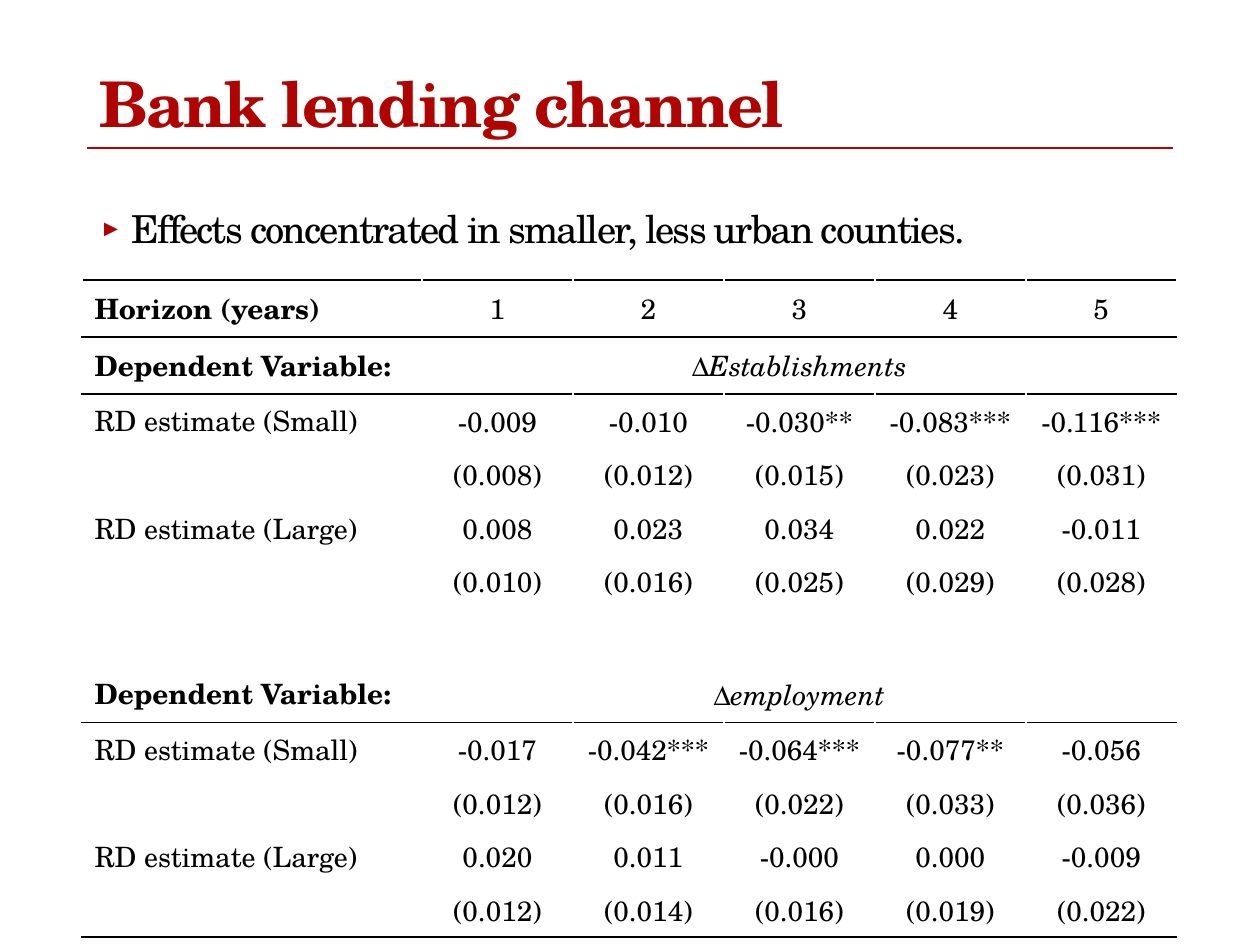
from lxml.etree import SubElement
from pptx import Presentation
from pptx.dml.color import RGBColor
from pptx.enum.shapes import MSO_CONNECTOR
from pptx.enum.text import MSO_ANCHOR, MSO_AUTO_SIZE, PP_ALIGN
from pptx.oxml.ns import qn
from pptx.util import Emu, Pt

PX = 914400 // 126
COLORS = {"accent": "B00400", "ink": "000000", "paper": "FFFFFF"}
FONT = "TeX Gyre Schola"

COLUMN_WIDTHS = [340] + [151] * 5
TALL_ROW, ROW = 57, 53
TALL_ROWS = {0, 1, 6, 7}
# Rule widths in points, keyed by row
TOP_RULES = {0: 1.5, 1: 1, 2: 1, 8: 1}
BOTTOM_RULES = {0: 1, 1: 1, 7: 1, 11: 1.5}

SMALL, LARGE = "RD estimate (Small)", "RD estimate (Large)"
DEPENDENT = "Dependent Variable:"
BOLD_LABELS = {"Horizon (years)", DEPENDENT}
# A row with a single value spans all the horizon columns
RESULTS = [
    ["Horizon (years)", "1", "2", "3", "4", "5"],
    [DEPENDENT, "ΔEstablishments"],
    [SMALL, "-0.009", "-0.010", "-0.030**", "-0.083***", "-0.116***"],
    ["", "(0.008)", "(0.012)", "(0.015)", "(0.023)", "(0.031)"],
    [LARGE, "0.008", "0.023", "0.034", "0.022", "-0.011"],
    ["", "(0.010)", "(0.016)", "(0.025)", "(0.029)", "(0.028)"],
    ["", ""],
    [DEPENDENT, "Δemployment"],
    [SMALL, "-0.017", "-0.042***", "-0.064***", "-0.077**", "-0.056"],
    ["", "(0.012)", "(0.016)", "(0.022)", "(0.033)", "(0.036)"],
    [LARGE, "0.020", "0.011", "-0.000", "0.000", "-0.009"],
    ["", "(0.012)", "(0.014)", "(0.016)", "(0.019)", "(0.022)"],
]


def px(length):
    return Emu(length * PX)


def rgb(name):
    return RGBColor.from_string(COLORS[name])


class SlideBuilder:
    """Holds the current slide and the style shared by its elements."""

    def __init__(self, slide):
        self.slide = slide

    def style(self, paragraph, size, color="ink", bold=False):
        font = paragraph.font
        font.name, font.size, font.bold = FONT, Pt(size), bold
        font.color.rgb = rgb(color)

    def placeholder(self, holder, text, box, anchor):
        """Place a template placeholder and return its only paragraph."""
        holder.left, holder.top, holder.width, holder.height = map(px, box)
        frame = holder.text_frame
        frame.text = text
        frame.auto_size = MSO_AUTO_SIZE.NONE
        frame.vertical_anchor = anchor
        paragraph = frame.paragraphs[0]
        paragraph.alignment = PP_ALIGN.LEFT
        paragraph.line_spacing = 0.9
        paragraph.runs[0]._r.get_or_add_rPr().set("spc", "-100")
        return paragraph

    def title(self, text, box):
        heading = self.placeholder(self.slide.shapes.title, text, box, MSO_ANCHOR.MIDDLE)
        self.style(heading, 36, "accent", bold=True)

    def bullet(self, text, box):
        point = self.placeholder(self.slide.placeholders[1], text, box, MSO_ANCHOR.TOP)
        point.space_before = Pt(10)
        properties = point._p.get_or_add_pPr()
        properties.set("marL", "228600")
        properties.set("indent", "-228600")
        bullet_color = SubElement(properties, qn("a:buClr"))
        SubElement(bullet_color, qn("a:srgbClr"), val=COLORS["accent"])
        SubElement(properties, qn("a:buSzPct"), val="60000")
        SubElement(properties, qn("a:buFont"), typeface="Arial")
        SubElement(properties, qn("a:buChar"), char="►")
        self.style(point, 22)

    def rule(self, x1, x2, y):
        line = self.slide.shapes.add_connector(
            MSO_CONNECTOR.STRAIGHT, px(x1), px(y), px(x2), px(y))
        line.line.color.rgb = rgb("accent")
        line.line.width = Pt(1.5)
        SubElement(line._element.spPr, qn("a:effectLst"))

    def cell_borders(self, cell, row):
        properties = cell._tc.get_or_add_tcPr()
        rules = {"T": TOP_RULES.get(row), "B": BOTTOM_RULES.get(row)}
        for side in "LRTB":
            width = rules.get(side)
            border = SubElement(properties, qn(f"a:ln{side}"), w=str(int(Pt(width or 1))))
            fill = SubElement(border, qn("a:solidFill"))
            SubElement(fill, qn("a:srgbClr"), val=COLORS["ink" if width else "paper"])

    def cell_text(self, cell, text, is_label):
        paragraph = cell.text_frame.paragraphs[0]
        self.style(paragraph, 16, bold=text in BOLD_LABELS)
        if not is_label:
            cell.vertical_anchor = MSO_ANCHOR.MIDDLE
            paragraph.alignment = PP_ALIGN.CENTER
        if text.startswith("Δ"):
            paragraph.add_run().text = "Δ"
            variable = paragraph.add_run()
            variable.text = text[1:]
            variable.font.italic = True
        elif text:
            paragraph.add_run().text = text

    def table(self, rows, left, top):
        heights = [TALL_ROW if i in TALL_ROWS else ROW for i in range(len(rows))]
        table = self.slide.shapes.add_table(
            len(rows), len(COLUMN_WIDTHS), px(left), px(top),
            px(sum(COLUMN_WIDTHS)), px(sum(heights))).table
        table.first_row = table.horz_banding = False
        for column, width in zip(table.columns, COLUMN_WIDTHS):
            column.width = px(width)
        for r, values in enumerate(rows):
            table.rows[r].height = px(heights[r])
            if len(values) == 2:
                table.cell(r, 1).merge(table.cell(r, len(COLUMN_WIDTHS) - 1))
            padded = values + [""] * (len(COLUMN_WIDTHS) - len(values))
            for c, text in enumerate(padded):
                cell = table.cell(r, c)
                self.cell_borders(cell, r)
                cell.fill.solid()
                cell.fill.fore_color.rgb = rgb("paper")
                self.cell_text(cell, text, is_label=c == 0)


def main():
    presentation = Presentation()
    presentation.slide_width, presentation.slide_height = px(1260), px(945)
    builder = SlideBuilder(presentation.slides.add_slide(presentation.slide_layouts[1]))
    builder.title("Bank lending channel", (87, 50, 1086, 115))
    builder.bullet("Effects concentrated in smaller, less urban counties.",
                   (87, 204, 1086, 648))
    builder.rule(87, 1173, 148)
    builder.table(RESULTS, 82, 280)
    presentation.save("out.pptx")


if __name__ == "__main__":
    main()
